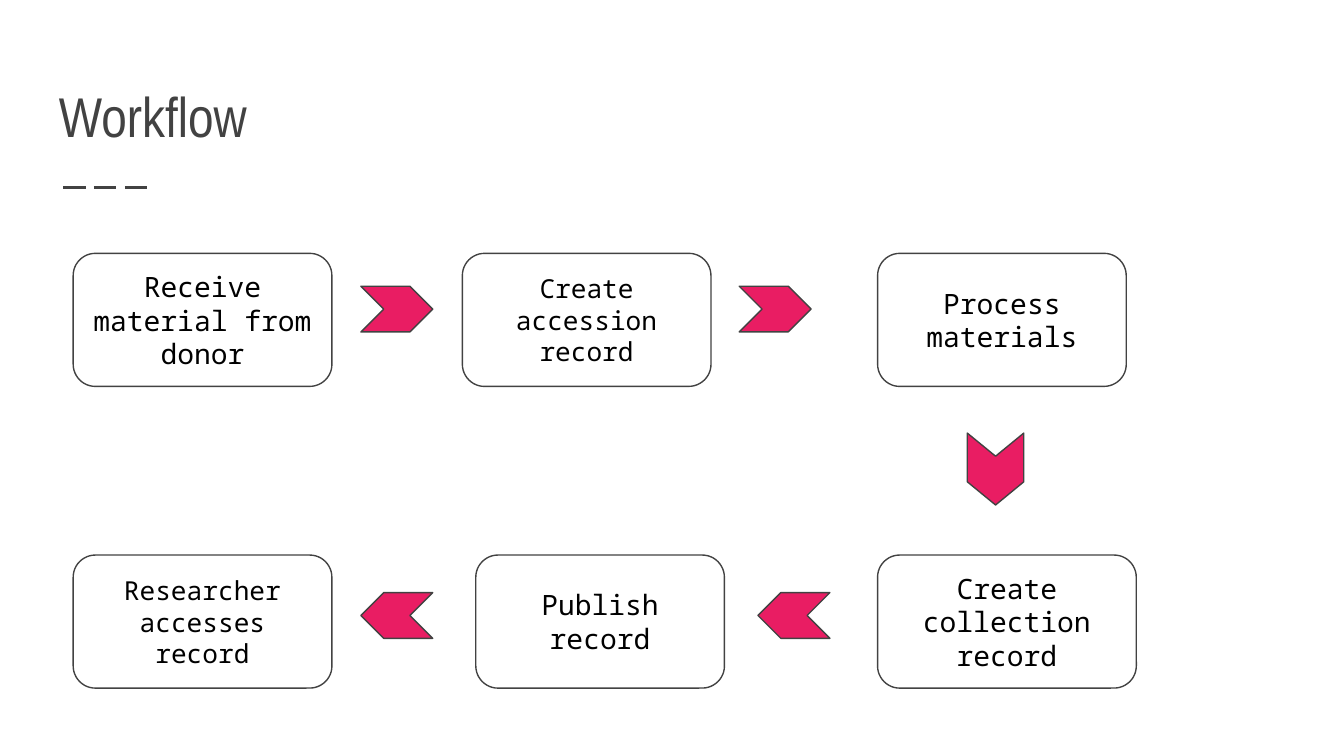
from dataclasses import dataclass

from lxml import etree
from pptx import Presentation
from pptx import util as u
from pptx.dml.color import RGBColor
from pptx.enum import dml, shapes, text
from pptx.oxml import ns

EMU_PER_PX = 4572  # 200 px to the inch


@dataclass(frozen=True)
class Theme:
    ink: str = "424242"
    accent: str = "E91D63"
    paper: str = "FFFFFF"
    body: str = "000000"
    title_font: str = "Arial Narrow"
    body_font: str = "Noto Sans Mono"
    title_size: int = 30
    large: int = 15
    small: int = 14
    outline: float = 0.75
    rule: float = 1.5


@dataclass(frozen=True)
class Step:
    label: str
    left: int
    top: int
    width: int
    size: int


@dataclass(frozen=True)
class Arrow:
    left: int
    top: int
    height: int = 68
    rotation: int = 0
    flipped: bool = False
    notch: float = 0.5


THEME = Theme()
STEP_HEIGHT, ARROW_WIDTH = 198, 107
NARROW, WIDE = 370, 385
TOP_ROW, BOTTOM_ROW = 377, 826
TOP_ARROWS, BOTTOM_ARROWS = 426, 882

STEPS = [
    Step("Receive material from donor", 109, TOP_ROW, WIDE, THEME.large),
    Step("Create accession record", 688, TOP_ROW, NARROW, THEME.small),
    Step("Process materials", 1306, TOP_ROW, NARROW, THEME.large),
    Step("Create collection record", 1306, BOTTOM_ROW, WIDE, THEME.large),
    Step("Publish record", 708, BOTTOM_ROW, NARROW, THEME.large),
    Step("Researcher accesses record", 109, BOTTOM_ROW, WIDE, THEME.small),
]
ARROWS = [
    Arrow(537, TOP_ARROWS),
    Arrow(1100, TOP_ARROWS),
    Arrow(1428, 656, height=84, rotation=90, notch=0.41),
    Arrow(1128, BOTTOM_ARROWS, flipped=True),
    Arrow(537, BOTTOM_ARROWS, flipped=True),
]


def px(length: int) -> u.Emu:
    return u.Emu(length * EMU_PER_PX)


def set_attributes(target, values: dict) -> None:
    for name, value in values.items():
        setattr(target, name, value)


def write(box, words: str, font: str, size: int, colour: str,
          align: text.PP_ALIGN, anchor: text.MSO_ANCHOR) -> None:
    """Put one paragraph in the box, with equal margins all round."""
    frame = box.text_frame
    margins = {f"margin_{side}": px(20) for side in ("left", "right", "top", "bottom")}
    set_attributes(frame, {"word_wrap": True, "vertical_anchor": anchor, **margins})
    para = frame.paragraphs[0]
    para.alignment = align
    span = para.add_run()
    span.text = words
    set_attributes(span.font, {"name": font, "size": u.Pt(size)})
    span.font.color.rgb = RGBColor.from_string(colour)


def add_outlined(page, kind: shapes.MSO_SHAPE, left: int, top: int,
                 width: int, height: int, fill: str):
    box = page.shapes.add_shape(kind, px(left), px(top), px(width), px(height))
    box.shadow.inherit = False
    box.fill.solid()
    box.fill.fore_color.rgb = RGBColor.from_string(fill)
    box.line.color.rgb = RGBColor.from_string(THEME.ink)
    box.line.width = u.Pt(THEME.outline)
    return box


def add_step(page, step: Step) -> None:
    box = add_outlined(page, shapes.MSO_SHAPE.FLOWCHART_ALTERNATE_PROCESS,
                       step.left, step.top, step.width, STEP_HEIGHT, THEME.paper)
    write(box, step.label, THEME.body_font, step.size, THEME.body,
          text.PP_ALIGN.CENTER, text.MSO_ANCHOR.MIDDLE)


def add_arrow(page, arrow: Arrow) -> None:
    chevron = add_outlined(page, shapes.MSO_SHAPE.CHEVRON, arrow.left, arrow.top,
                           ARROW_WIDTH, arrow.height, THEME.accent)
    chevron.rotation = arrow.rotation
    chevron.adjustments[0] = arrow.notch
    if arrow.flipped:
        chevron._element.spPr.find(ns.qn("a:xfrm")).set("flipH", "1")


def add_heading(page) -> None:
    rule = page.shapes.add_connector(shapes.MSO_CONNECTOR.STRAIGHT,
                                     px(94), px(279), px(228), px(279))
    rule.line.color.rgb = RGBColor.from_string(THEME.ink)
    set_attributes(rule.line, {"width": u.Pt(THEME.rule),
                               "dash_style": dml.MSO_LINE.LONG_DASH})
    etree.SubElement(rule._element.spPr, ns.qn("a:effectLst"))
    title = page.shapes.add_textbox(px(68), px(82), px(1864), px(160))
    write(title, "Workflow", THEME.title_font, THEME.title_size, THEME.ink,
          text.PP_ALIGN.LEFT, text.MSO_ANCHOR.BOTTOM)


def main() -> None:
    deck = Presentation()
    set_attributes(deck, {"slide_width": px(2000), "slide_height": px(1125)})
    page = deck.slides.add_slide(deck.slide_layouts[6])
    add_heading(page)
    for step in STEPS:
        add_step(page, step)
    for arrow in ARROWS:
        add_arrow(page, arrow)
    deck.save("out.pptx")


if __name__ == "__main__":
    main()
